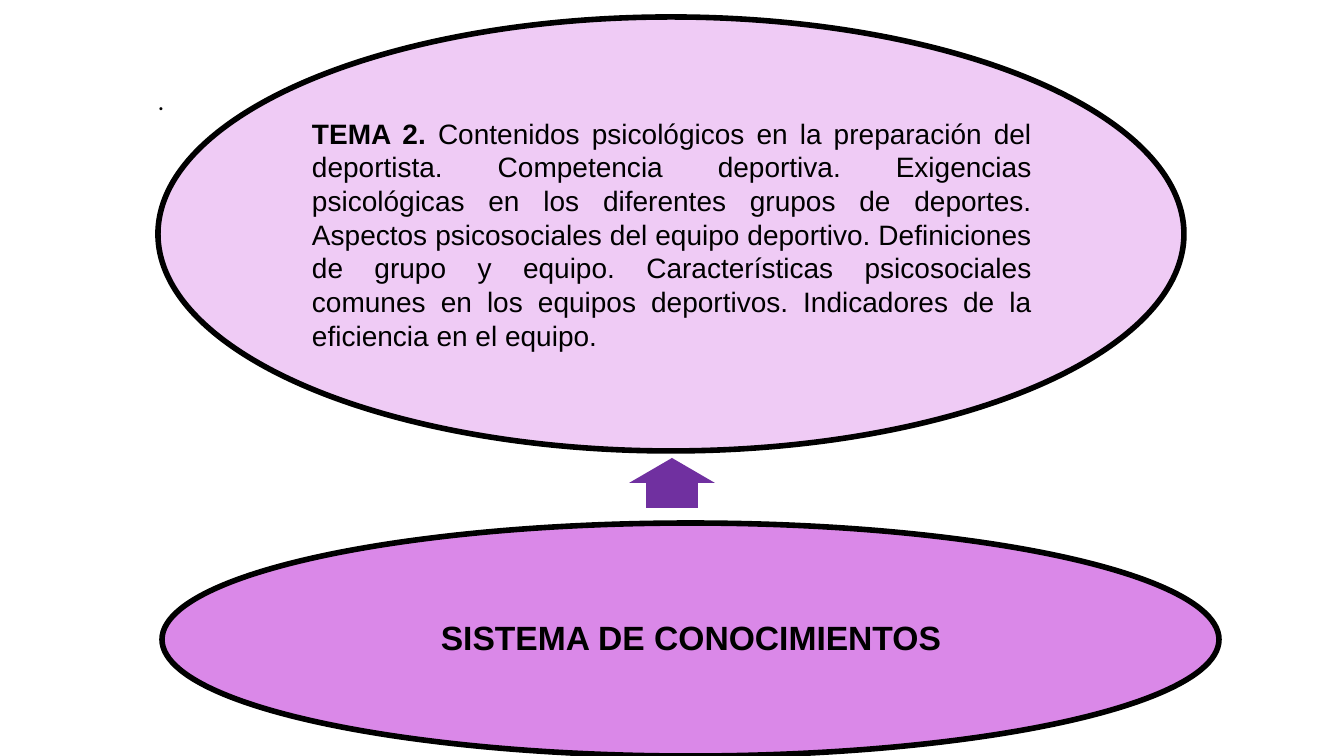
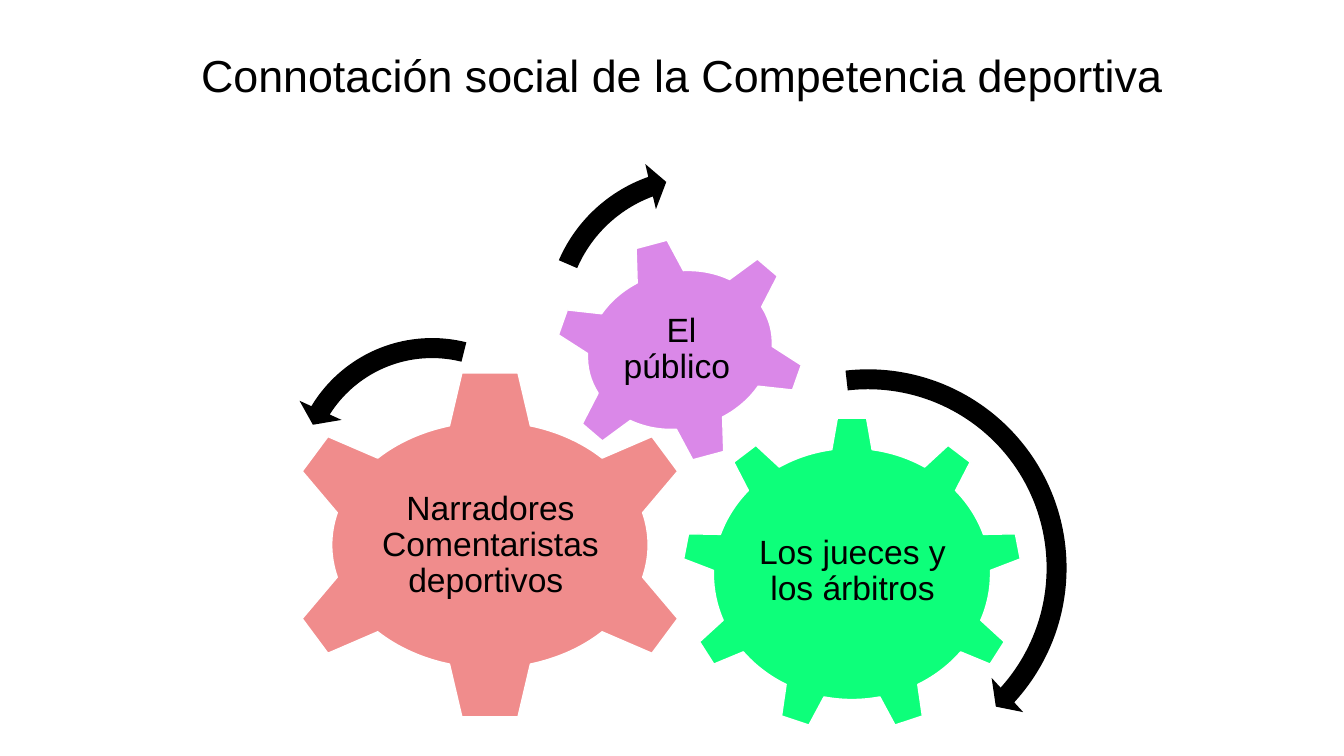
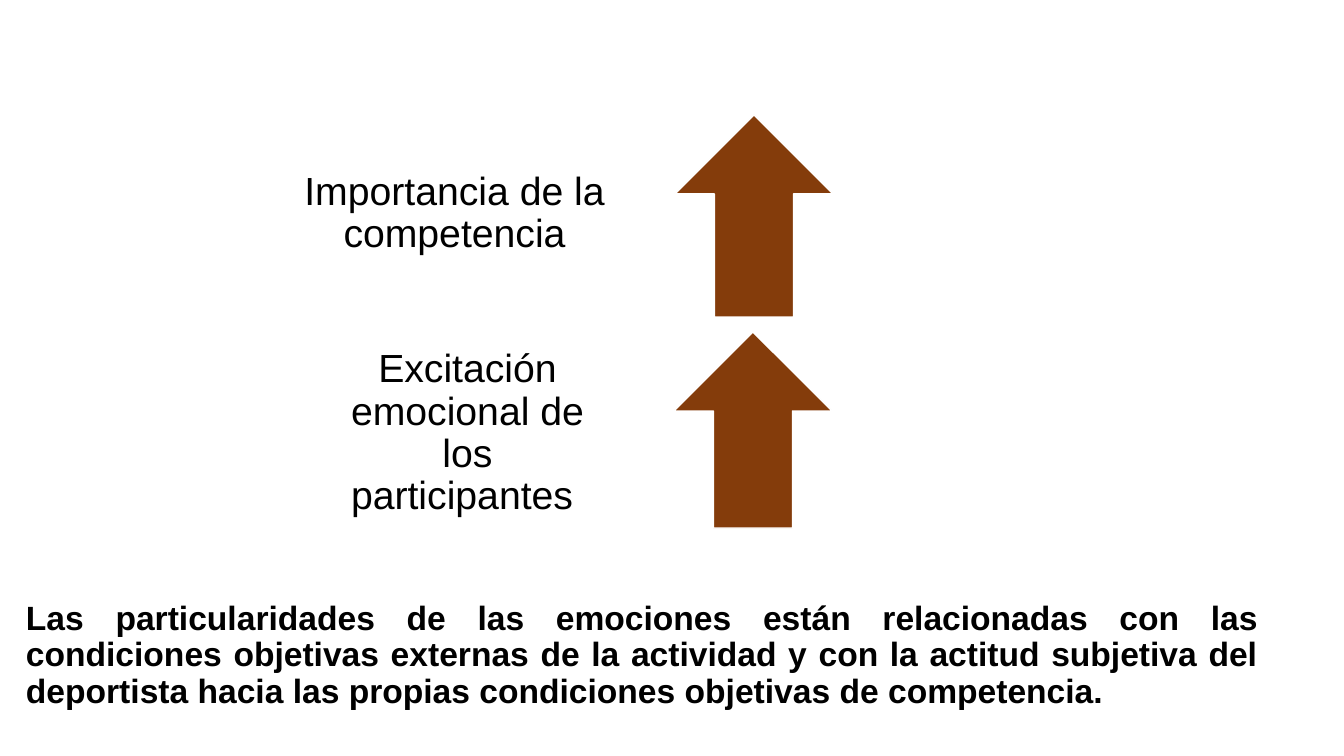
"""Build three slides on psychological preparation and sports competition."""
from pptx import Presentation
from pptx.dml.color import RGBColor
from pptx.enum.shapes import MSO_SHAPE
from pptx.enum.text import MSO_ANCHOR, PP_ALIGN
from pptx.util import Emu, Pt

SLIDE_WIDTH, SLIDE_HEIGHT = 1344, 756
EMU_PER_PX = 12192000 / SLIDE_WIDTH
ANGLE_UNIT = 0.6

ELLIPSE, UP_ARROW = MSO_SHAPE.OVAL, MSO_SHAPE.UP_ARROW
GEAR_6, GEAR_9 = MSO_SHAPE.GEAR_6, MSO_SHAPE.GEAR_9
TURN_RIGHT, TURN_LEFT = MSO_SHAPE.CIRCULAR_ARROW, MSO_SHAPE.LEFT_CIRCULAR_ARROW
LEFT, CENTER, JUSTIFY = PP_ALIGN.LEFT, PP_ALIGN.CENTER, PP_ALIGN.JUSTIFY
MIDDLE = MSO_ANCHOR.MIDDLE

COLORS = {
    "black": "000000", "white": "FFFFFF", "lilac": "EFCBF5", "orchid": "DA88E8",
    "purple": "7030A0", "green": "0DFF7A", "salmon": "F08C8C", "brown": "843C0B",
}

TITLE_INSETS = (10, 5, 10, 5)
LABEL_INSETS = (3, 3, 3, 3)
ARROW_LABEL_INSETS = (22, 0, 22, 22)
OUTLINE = {"line": "black", "line_width": 4}
EDGE = {"line": "white", "line_width": 1}
TITLE = {"insets": TITLE_INSETS, "align": LEFT}
ARROW_LABEL = {"insets": ARROW_LABEL_INSETS, "size": 28}


def sweep(band, head_angle, end, start, head):
    """Turn percentages and degrees into circular arrow adjustments."""
    angles = [angle * ANGLE_UNIT for angle in (head_angle, end, start)]
    return [band / 100, *angles, head / 100]


SLIDES = [
    {
        "shapes": [
            (ELLIPSE, (162, 523, 1057, 233), "orchid", OUTLINE),
            (UP_ARROW, (629, 458, 86, 50), "purple", {"adjustments": [0.6, 0.5]}),
            (ELLIPSE, (158, 17, 1026, 434), "lilac", OUTLINE),
        ],
        "texts": [
            (".", (148, 85, 40, 31),
             {"size": 18, "font": "Calibri", "align": LEFT, "insets": (10, 0, 10, 0), "spacing": 1}),
            ("SISTEMA DE CONOCIMIENTOS", (317, 557, 748, 165), {"bold": True}),
            (" Contenidos psicológicos en la preparación del deportista. Competencia deportiva. "
             "Exigencias psicológicas en los diferentes grupos de deportes. Aspectos psicosociales "
             "del equipo deportivo. Definiciones de grupo y equipo. Características psicosociales "
             "comunes en los equipos deportivos. Indicadores de la eficiencia en el equipo.",
             (309, 81, 726, 306),
             {"lead": "TEMA 2.", "size": 20, "align": JUSTIFY, "spacing": 1}),
        ],
    },
    {
        "shapes": [
            (GEAR_9, (682, 417, 340, 314), "green", EDGE),
            (GEAR_6, (279, 369, 422, 352), "salmon", EDGE),
            (GEAR_6, (553, 238, 254, 224), "orchid", {**EDGE, "rotation": 345}),
            (TURN_RIGHT, (656, 356, 424, 424), "black",
             {"adjustments": sweep(4.7, 4.98, 42.33, 263.52, 5.5)}),
            (TURN_LEFT, (278, 325, 308, 308), "black",
             {"adjustments": sweep(6.5, 7.17, 174.82, 247.3, 7.5), "rotation": 36.8}),
            (TURN_RIGHT, (533, 155, 332, 332), "black",
             {"adjustments": sweep(6, 6.57, 221.9, 175.14, 7), "rotation": 28.3}),
        ],
        "texts": [
            ("Connotación social de la Competencia deportiva", (191, 38, 999, 79),
             {**TITLE, "size": 32}),
            ("Los jueces y los árbitros", (749, 491, 207, 161), {}),
            ("Narradores Comentaristas deportivos ", (378, 459, 225, 173), {}),
            ("El público ", (612, 285, 139, 129), {}),
        ],
    },
    {
        "shapes": [
            (UP_ARROW, (675, 115, 158, 202), "brown", EDGE),
            (UP_ARROW, (674, 332, 158, 196), "brown", EDGE),
        ],
        "texts": [
            ("Las particularidades de las emociones están relacionadas con las condiciones "
             "objetivas externas de la actividad y con la actitud subjetiva del deportista hacia "
             "las propias condiciones objetivas de competencia.",
             (16, 583, 1252, 146), {**TITLE, "align": JUSTIFY, "bold": True}),
            ("Importancia de la competencia", (273, 139, 363, 171), ARROW_LABEL),
            ("Excitación emocional de los participantes ", (320, 342, 295, 205), ARROW_LABEL),
        ],
    },
]


def px(length):
    """Convert px to EMU."""
    return Emu(round(length * EMU_PER_PX))


def color(name):
    """Look up a named colour."""
    return RGBColor.from_string(COLORS[name])


def put_shape(page, kind, place, fill, line=None, line_width=1, rotation=0, adjustments=()):
    """Draw one filled preset shape."""
    shape = page.shapes.add_shape(kind, *map(px, place))
    shape.shadow.inherit = False
    shape.rotation = rotation
    shape.fill.solid()
    shape.fill.fore_color.rgb = color(fill)
    if line:
        shape.line.color.rgb = color(line)
        shape.line.width = Pt(line_width)
    else:
        shape.line.fill.background()
    for index, value in enumerate(adjustments):
        shape.adjustments[index] = value


def put_text(page, text, place, lead="", size=24, font="Arial", bold=False,
             align=CENTER, spacing=0.9, insets=LABEL_INSETS):
    """Write one paragraph, with an optional bold lead, in a text box."""
    frame = page.shapes.add_textbox(*map(px, place)).text_frame
    frame.word_wrap = True
    frame.vertical_anchor = MIDDLE
    frame.margin_left, frame.margin_top, frame.margin_right, frame.margin_bottom = map(px, insets)
    para = frame.paragraphs[0]
    para.alignment = align
    para.line_spacing = spacing
    for words, heavy in ((lead, True), (text, bold)):
        if words:
            span = para.add_run()
            span.text = words
            span.font.name = font
            span.font.size = Pt(size)
            span.font.bold = heavy
            span.font.color.rgb = color("black")


def main():
    """Build and save the deck."""
    deck = Presentation()
    deck.slide_width, deck.slide_height = px(SLIDE_WIDTH), px(SLIDE_HEIGHT)
    for content in SLIDES:
        page = deck.slides.add_slide(deck.slide_layouts[6])
        for kind, place, fill, style in content["shapes"]:
            put_shape(page, kind, place, fill, **style)
        for text, place, style in content["texts"]:
            put_text(page, text, place, **style)
    deck.save("out.pptx")


if __name__ == "__main__":
    main()
